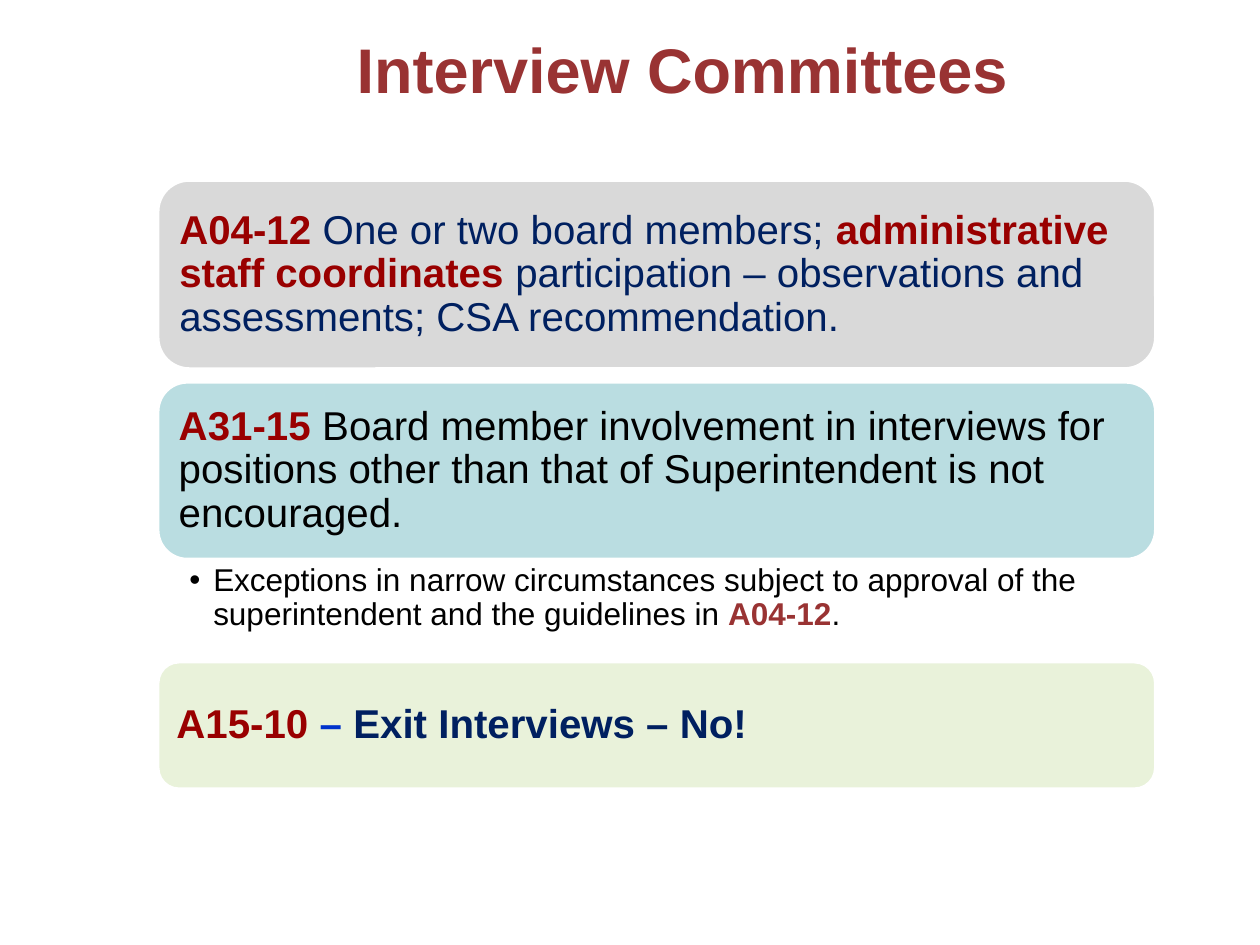
from dataclasses import dataclass

from lxml.etree import SubElement
from pptx import Presentation
from pptx.dml.color import RGBColor as RGB
from pptx.enum.shapes import MSO_SHAPE as Shape
from pptx.enum.text import MSO_ANCHOR as Anchor, PP_ALIGN as Align
from pptx.oxml.ns import qn
from pptx.util import Cm, Pt

COLORS = {
    "white": "FFFFFF",
    "gray": "D9D9D9",
    "teal": "BADDE1",
    "green": "E9F2DA",
    "brick": "993333",
    "red": "990000",
    "navy": "002060",
    "blue": "0033CC",
    "black": "000000",
}
LEFT, WIDTH = 3.18, 20.12


@dataclass
class Run:
    text: str
    color: str
    bold: bool = False


@dataclass
class Card:
    top: float
    height: float
    fill: str
    runs: list[Run]


CARDS = [
    Card(3.63, 3.81, "gray", [
        Run("A04-12 ", "red", True),
        Run("One or two board members; ", "navy"),
        Run("administrative staff coordinates ", "red", True),
        Run("participation – observations and assessments; CSA recommendation.", "navy"),
    ]),
    Card(7.7, 3.58, "teal", [
        Run("A31-15 ", "red", True),
        Run("Board member involvement in interviews for positions other than "
            "that of Superintendent is not encouraged.", "black"),
    ]),
    Card(13.34, 2.57, "green", [
        Run("A15-10", "red", True),
        Run(" – ", "blue", True),
        Run("Exit Interviews – No!", "navy", True),
    ]),
]
EXCEPTIONS = [
    Run("Exceptions in narrow circumstances subject to approval of the "
        "superintendent and the guidelines in ", "black"),
    Run("A04-12", "brick", True),
    Run(".", "black"),
]


def rgb(name: str) -> RGB:
    return RGB.from_string(COLORS[name])


def write(sp, runs: list[Run], size: float, insets: tuple, anchor=Anchor.MIDDLE,
          align=Align.LEFT, spacing: float = 0.9):
    tf = sp.text_frame
    left, top, right, bottom = map(Cm, insets)
    frame = {"word_wrap": True, "vertical_anchor": anchor, "margin_left": left,
             "margin_top": top, "margin_right": right, "margin_bottom": bottom}
    for name, value in frame.items():
        setattr(tf, name, value)
    p = tf.paragraphs[0]
    p.alignment, p.line_spacing = align, spacing
    for run in runs:
        r = p.add_run()
        r.text = run.text
        for name, value in {"name": "Arial", "size": Pt(size), "bold": run.bold}.items():
            setattr(r.font, name, value)
        r.font.color.rgb = rgb(run.color)
    return p


def add_box(s, left: float, top: float, width: float, height: float):
    return s.shapes.add_textbox(Cm(left), Cm(top), Cm(width), Cm(height))


def add_card(s, card: Card) -> None:
    sp = s.shapes.add_shape(Shape.ROUNDED_RECTANGLE, Cm(LEFT), Cm(card.top),
                            Cm(WIDTH), Cm(card.height))
    sp.shadow.inherit = False
    sp.fill.solid()
    sp.fill.fore_color.rgb = rgb(card.fill)
    sp.line.color.rgb = rgb("white")
    sp.line.width = Pt(2)
    write(sp, card.runs, 23, (0.25,) * 4)


def add_bullet(p, indent: float) -> None:
    p.level = 1
    pPr = p._p.get_or_add_pPr()
    pPr.set("marL", str(Cm(indent)))
    pPr.set("indent", str(-Cm(indent)))
    SubElement(pPr, qn("a:buFont"), typeface="Arial")
    SubElement(pPr, qn("a:buChar"), char="•")


def main() -> None:
    prs = Presentation()
    prs.slide_width, prs.slide_height = Cm(25.4), Cm(19.05)
    s = prs.slides.add_slide(prs.slide_layouts[6])
    write(add_box(s, 4.65, 0.43, 18.21, 1.9), [Run("Interview Committees", "brick", True)],
          36, (0.25, 0.13, 0.25, 0.13), align=Align.CENTER, spacing=1.0)
    for card in CARDS:
        add_card(s, card)
    p = write(add_box(s, LEFT, 11.3, WIDTH, 2.04), EXCEPTIONS, 18,
              (0.64, 0.08, 0.46, 0.08), anchor=Anchor.TOP)
    add_bullet(p, 0.48)
    prs.save("out.pptx")


if __name__ == "__main__":
    main()
